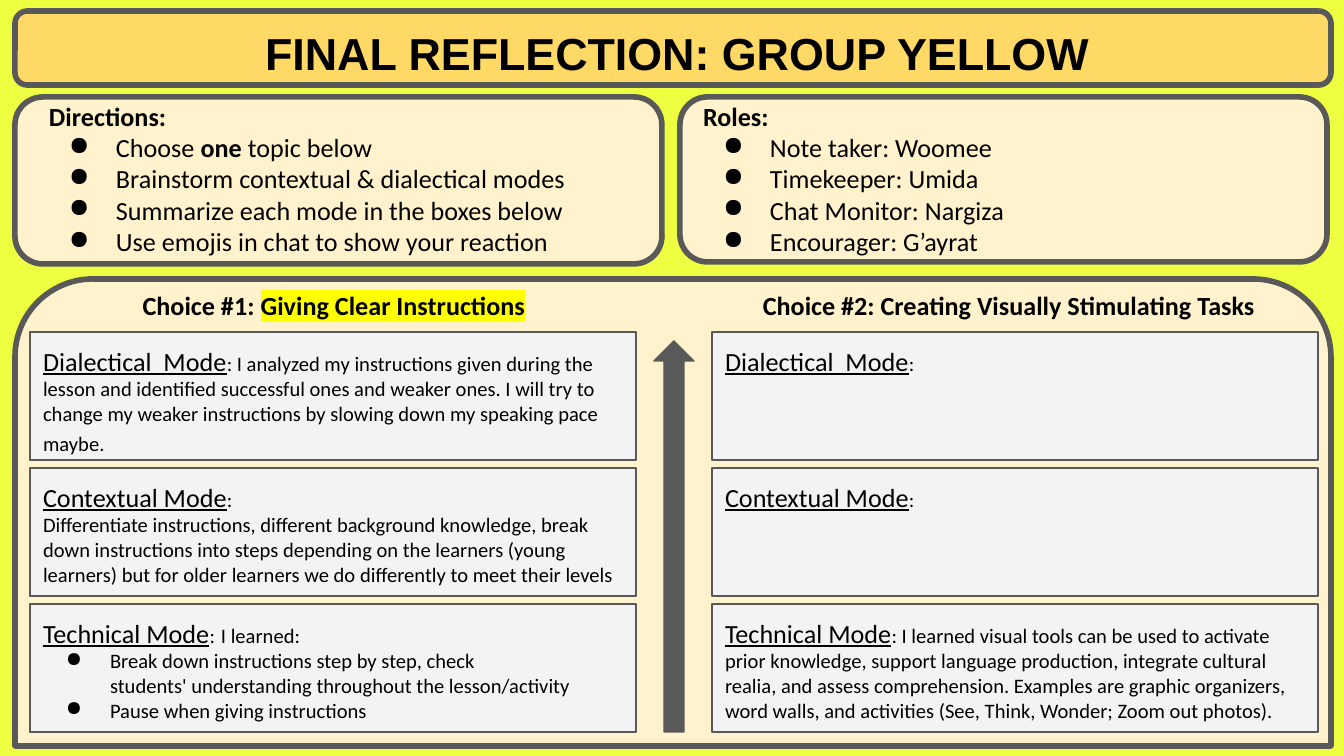
"""Build the group yellow final reflection slide."""
from lxml import etree
from pptx import Presentation
from pptx import util as u
from pptx.dml.color import RGBColor
from pptx.enum import shapes, text
from pptx.oxml.ns import qn

SCALE = 9144000 / 1344
KIND = shapes.MSO_SHAPE
LEFT, CENTER = text.PP_ALIGN.LEFT, text.PP_ALIGN.CENTER
hexcolor = RGBColor.from_string

prs = Presentation()
prs.slide_width, prs.slide_height = u.Emu(9144000), u.Emu(round(756 * SCALE))
s = prs.slides.add_slide(prs.slide_layouts[6])
s.background.fill.solid()
s.background.fill.fore_color.rgb = hexcolor("EEFF41")


def draw(kind, box, fill, width, adjust=()):
    sp = s.shapes.add_shape(kind, *[u.Emu(round(v * SCALE)) for v in box])
    sp.shadow.inherit = False
    sp.fill.solid()
    sp.fill.fore_color.rgb = hexcolor(fill)
    sp.line.color.rgb = hexcolor("595959")
    sp.line.width = u.Pt(width)
    for i, value in enumerate(adjust):
        sp.adjustments[i] = value
    return sp


def write(sp, paragraphs, align=LEFT, font="Calibri", top=13):
    tf = sp.text_frame
    tf.word_wrap = True
    tf.vertical_anchor = text.MSO_ANCHOR.TOP
    tf.margin_left = tf.margin_right = tf.margin_bottom = u.Emu(round(13 * SCALE))
    tf.margin_top = u.Emu(round(top * SCALE))
    for i, (margin, indent, runs) in enumerate(paragraphs):
        p = tf.paragraphs[0] if i == 0 else tf.add_paragraph()
        p.alignment = align
        pPr = p._p.get_or_add_pPr()
        pPr.set("marL", str(round(margin * SCALE)))
        pPr.set("indent", str(round(indent * SCALE)))
        if indent:
            color = etree.SubElement(pPr, qn("a:buClr"))
            etree.SubElement(color, qn("a:srgbClr"), val="000000")
            etree.SubElement(pPr, qn("a:buChar"), char="●")
        for words, size, style in runs:
            r = p.add_run()
            r.text = words
            r.font.size = u.Pt(size)
            r.font.name = font
            r.font.bold = "b" in style
            r.font.underline = "u" in style
            r.font.color.rgb = hexcolor("000000")
            if "h" in style:
                mark = etree.Element(qn("a:highlight"))
                etree.SubElement(mark, qn("a:srgbClr"), val="FFFF00")
                r._r.rPr.find(qn("a:solidFill")).addnext(mark)


draw(KIND.ROUNDED_RECTANGLE, (15, 11, 1316, 74), "FFD966", 3, [0.167])
draw(KIND.ROUNDED_RECTANGLE, (15, 97, 647, 167), "FFF2CC", 3, [0.167])
draw(KIND.ROUND_2_SAME_RECTANGLE, (15, 279, 1316, 467), "FFF2CC", 3, [0.167, 0])
draw(KIND.ROUNDED_RECTANGLE, (680, 97, 647, 165), "FFF2CC", 3, [0.167])

directions = [
    (0, 0, [("Directions:", 14, "b")]),
    (67, -47, [("Choose ", 14, ""), ("one", 14, "b"), (" topic below", 14, "")]),
]
for line in ("Brainstorm contextual & dialectical modes",
             "Summarize each mode in the boxes below",
             "Use emojis in chat to show your reaction"):
    directions.append((67, -47, [(line, 14, "")]))

roles = [(0, 0, [("Roles:", 14, "b")])]
for line in ("Note taker: Woomee", "Timekeeper: Umida",
             "Chat Monitor: Nargiza", "Encourager: G’ayrat"):
    roles.append((67, -47, [(line, 14, "")]))

title = [(0, 0, [("FINAL REFLECTION: GROUP YELLOW", 24, "b")])]
choice_1 = [(0, 0, [("Choice #1: ", 14, "b"), ("Giving Clear Instructions", 14, "bh")])]
choice_2 = [(0, 0, [("Choice #2: Creating Visually Stimulating Tasks", 14, "b")])]

for box, paragraphs, align, font, top in (
    ((24, 8, 1306, 74), title, CENTER, "Arial", 18),
    ((36, 87, 593, 176), directions, LEFT, "Calibri", 13),
    ((690, 87, 593, 176), roles, LEFT, "Calibri", 13),
    ((15, 276, 638, 52), choice_1, CENTER, "Calibri", 13),
    ((690, 276, 638, 52), choice_2, CENTER, "Calibri", 13),
):
    sp = s.shapes.add_textbox(*[u.Emu(round(v * SCALE)) for v in box])
    write(sp, paragraphs, align, font, top)

modes = ("Dialectical  Mode", "Contextual Mode", "Technical Mode")
answers = (
    (30, (
        ([(": I analyzed my instructions given during the lesson and identified "
           "successful ones and weaker ones. I will try to change my weaker "
           "instructions by slowing down my speaking pace maybe.", 11, ""),
          (" ", 14, "")], []),
        ([(":", 11, "")],
         [(0, 0, "Differentiate instructions, different background knowledge, break "
                 "down instructions into steps depending on the learners (young "
                 "learners) but for older learners we do differently to meet "
                 "their levels")]),
        ([(":", 11, ""), (" ", 14, ""), ("I learned:", 11, "")],
         [(67, -44, "Break down instructions step by step, check"),
          (67, 0, "students' understanding throughout the lesson/activity"),
          (67, -44, "Pause when giving instructions")]),
    )),
    (712, (
        ([(":", 11, "")], []),
        ([(":", 11, "")], []),
        ([(": I learned visual tools can be used to activate prior knowledge, "
           "support language production, integrate cultural realia, and assess "
           "comprehension. Examples are graphic organizers, word walls, and "
           "activities (See, Think, Wonder; Zoom out photos).", 11, "")], []),
    )),
)
for x, column in answers:
    for row, (mode, (lead, details)) in enumerate(zip(modes, column)):
        sp = draw(KIND.RECTANGLE, (x, 332 + 136 * row, 606, 128), "F3F3F3", 0.75)
        paragraphs = [(0, 0, [(mode, 14, "u")] + lead)]
        for margin, indent, words in details:
            paragraphs.append((margin, indent, [(words, 11, "")]))
        write(sp, paragraphs)

draw(KIND.UP_ARROW, (654, 341, 40, 391), "595959", 0.75, [0.5, 0.5])

prs.save("out.pptx")
